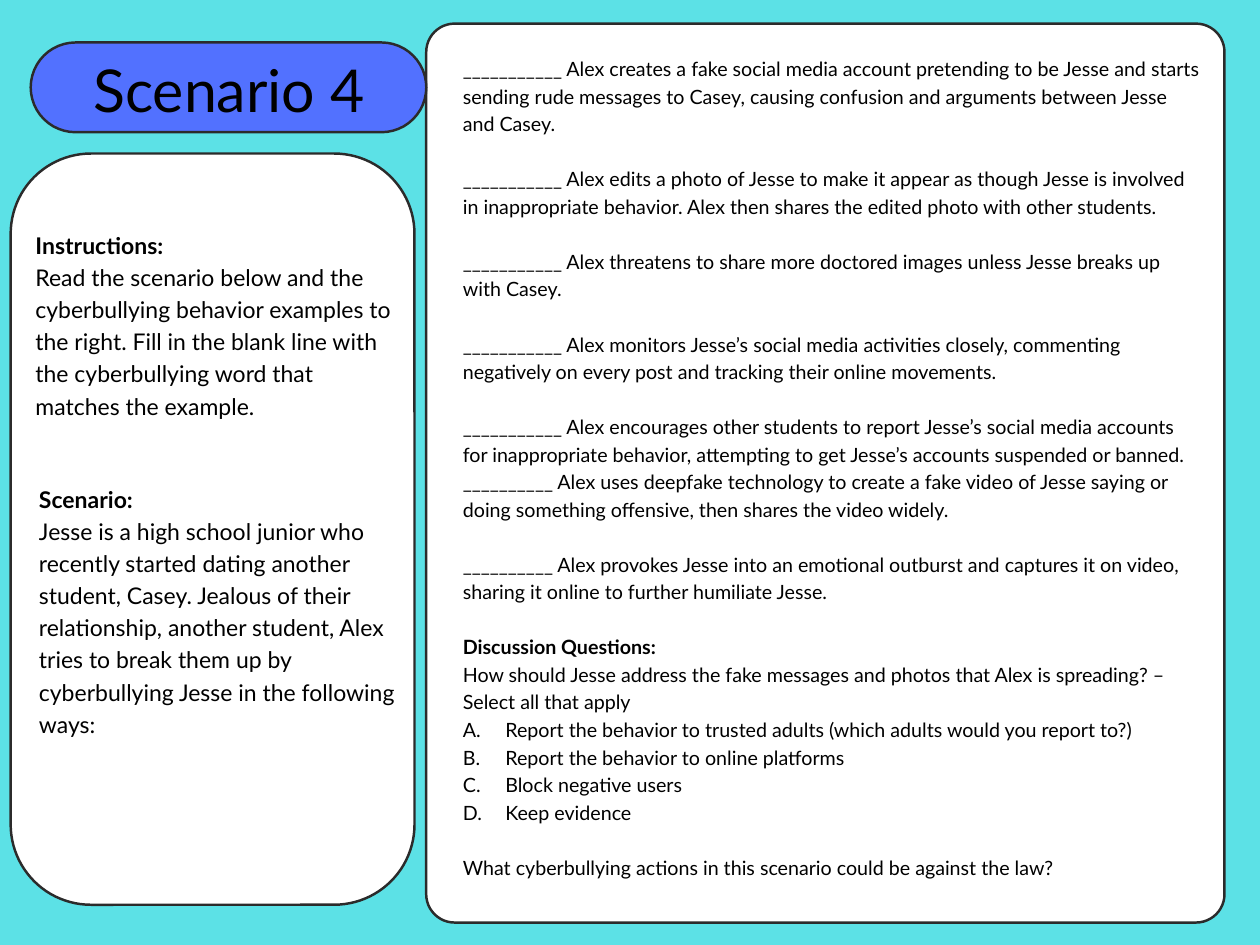
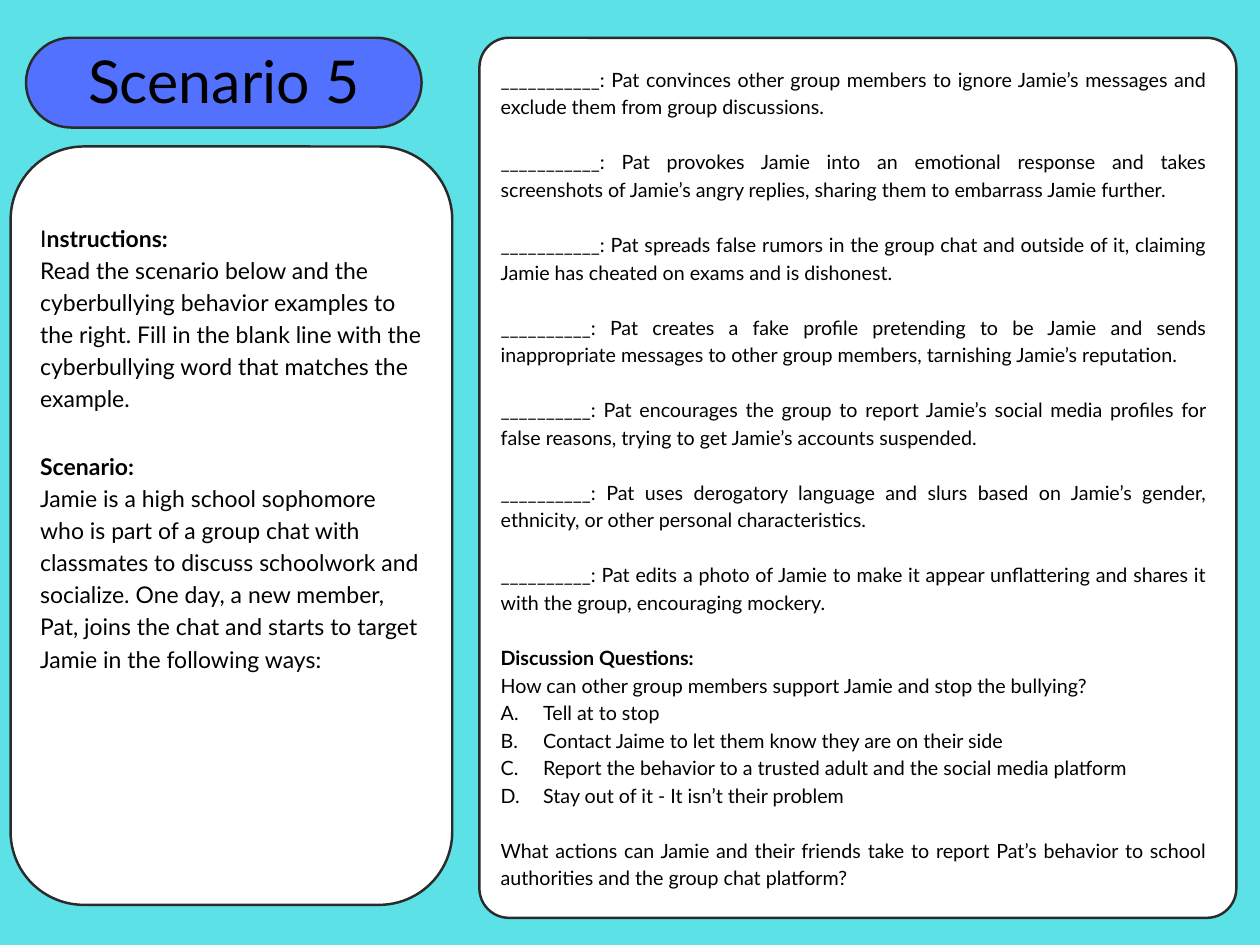
from dataclasses import dataclass

from lxml.etree import SubElement
from pptx import Presentation
from pptx.dml.color import RGBColor
from pptx.enum.shapes import MSO_SHAPE as Preset
from pptx.enum.text import MSO_AUTO_SIZE as AutoSize, PP_ALIGN as Align
from pptx.oxml.ns import qn
from pptx.util import Inches, Pt


@dataclass(frozen=True)
class Theme:
    font: str = "Lato"
    background: RGBColor = RGBColor(0x5C, 0xE1, 0xE6)
    panel: RGBColor = RGBColor(0xFF, 0xFF, 0xFF)
    pill: RGBColor = RGBColor(0x52, 0x71, 0xFF)
    outline: RGBColor = RGBColor(0x2B, 0x2B, 0x2B)
    ink: RGBColor = RGBColor(0x00, 0x00, 0x00)
    outline_width: float = 1.5
    title_size: int = 36
    side_size: int = 14
    question_size: int = 12
    leading: float = 1.4
    choice_indent: float = 0.36


THEME = Theme()


@dataclass(frozen=True)
class Box:
    left: float
    top: float
    width: float
    height: float

    def inner(self, left, top, width, height):
        return Box(self.left + left, self.top + top, width, height)

    def lengths(self):
        return [Inches(value) for value in (self.left, self.top, self.width, self.height)]


def apply_format(target, values):
    for name, value in values.items():
        setattr(target, name, value)


def add_panel(slide, box, radius, color):
    shape = slide.shapes.add_shape(Preset.ROUNDED_RECTANGLE, *box.lengths())
    shape.adjustments[0] = radius / min(box.width, box.height)
    shape.shadow.inherit = False
    shape.fill.solid()
    shape.fill.fore_color.rgb = color
    shape.line.color.rgb = THEME.outline
    shape.line.width = Pt(THEME.outline_width)


def number_choice(paragraph):
    properties = paragraph._p.get_or_add_pPr()
    indent = Inches(THEME.choice_indent)
    properties.set("marL", str(indent))
    properties.set("indent", str(-indent))
    SubElement(properties, qn("a:buFont"), typeface=THEME.font)
    SubElement(properties, qn("a:buAutoNum"), type="alphaUcPeriod")


def add_text(slide, box, size, paragraphs, align=Align.LEFT):
    frame = slide.shapes.add_textbox(*box.lengths()).text_frame
    margins = dict.fromkeys(("margin_left", "margin_top", "margin_right", "margin_bottom"), 0)
    apply_format(frame, {**margins, "word_wrap": True, "auto_size": AutoSize.SHAPE_TO_FIT_TEXT})
    leading = Pt(size * THEME.leading)
    for index, (kind, content) in enumerate(paragraphs):
        paragraph = frame.paragraphs[0] if index == 0 else frame.add_paragraph()
        gap = leading if index and kind in ("spaced", "heading") else 0
        apply_format(paragraph, {"alignment": align, "line_spacing": leading, "space_before": gap})
        if kind == "choice":
            number_choice(paragraph)
        runs = [(content, kind == "heading")] if isinstance(content, str) else content
        for text, bold in runs:
            run = paragraph.add_run()
            run.text = text
            apply_format(run.font, {"name": THEME.font, "size": Pt(size), "bold": bold})
            run.font.color.rgb = THEME.ink


def add_title(slide, box, text_box, title):
    add_panel(slide, box, box.height / 2, THEME.pill)
    add_text(slide, box.inner(*text_box), THEME.title_size, [("plain", title)], Align.CENTER)


def add_side_texts(slide, box, sections):
    for text_box, heading, body in sections:
        add_text(slide, box.inner(*text_box), THEME.side_size,
                 [("heading", heading), ("plain", body)])


def add_questions(slide, box, text_box, content, align):
    paragraphs = [*content["examples"], ("heading", "Discussion Questions:"),
                  ("plain", content["question"]),
                  *(("choice", choice) for choice in content["choices"]),
                  ("spaced", content["closing"])]
    add_text(slide, box.inner(*text_box), THEME.question_size, paragraphs, align)


def add_scenario(presentation, scenario):
    slide = presentation.slides.add_slide(presentation.slide_layouts[6])
    slide.background.fill.solid()
    slide.background.fill.fore_color.rgb = THEME.background
    side, questions = scenario["side"], scenario["questions"]
    for region in (side, questions):
        add_panel(slide, region["box"], region["radius"], THEME.panel)
    add_side_texts(slide, side["box"], side["sections"])
    add_questions(slide, questions["box"], questions["text_box"], questions, questions["align"])
    add_title(slide, **scenario["title"])


def example(blank, text, kind="spaced"):
    return kind, "_" * blank + text


INSTRUCTIONS = (
    "Read the scenario below and the cyberbullying behavior examples to the right. "
    "Fill in the blank line with the cyberbullying word that matches the example."
)

SCENARIOS = [
    {
        "title": {"box": Box(0.26, 0.36, 3.35, 0.76), "text_box": (-0.31, -0.01, 3.98, 0.67),
                  "title": "Scenario 4"},
        "side": {
            "box": Box(0.09, 1.3, 3.42, 6.36),
            "radius": 0.68,
            "sections": [
                ((0.21, 0.62, 3.09, 1.62), "Instructions:", INSTRUCTIONS),
                ((0.24, 2.77, 3.02, 2.5), "Scenario:",
                 "Jesse is a high school junior who recently started dating another student, "
                 "Casey. Jealous of their relationship, another student, Alex tries to break "
                 "them up by cyberbullying Jesse in the following ways:"),
            ],
        },
        "questions": {
            "box": Box(3.61, 0.2, 6.76, 7.61),
            "radius": 0.24,
            "text_box": (0.31, 0.25, 6.27, 7.55),
            "align": Align.LEFT,
            "examples": [
                example(11, " Alex creates a fake social media account pretending to be Jesse "
                        "and starts sending rude messages to Casey, causing confusion and "
                        "arguments between Jesse and Casey."),
                example(11, " Alex edits a photo of Jesse to make it appear as though Jesse is "
                        "involved in inappropriate behavior. Alex then shares the edited photo "
                        "with other students."),
                example(11, " Alex threatens to share more doctored images unless Jesse breaks "
                        "up with Casey."),
                example(11, " Alex monitors Jesse’s social media activities closely, commenting "
                        "negatively on every post and tracking their online movements."),
                example(11, " Alex encourages other students to report Jesse’s social media "
                        "accounts for inappropriate behavior, attempting to get Jesse’s accounts "
                        "suspended or banned."),
                example(10, " Alex uses deepfake technology to create a fake video of Jesse "
                        "saying or doing something offensive, then shares the video widely.",
                        "plain"),
                example(10, " Alex provokes Jesse into an emotional outburst and captures it on "
                        "video, sharing it online to further humiliate Jesse."),
            ],
            "question": "How should Jesse address the fake messages and photos that Alex is "
                        "spreading? – Select all that apply",
            "choices": [
                "Report the behavior to trusted adults (which adults would you report to?)",
                "Report the behavior to online platforms",
                "Block negative users",
                "Keep evidence",
            ],
            "closing": "What cyberbullying actions in this scenario could be against the law?",
        },
    },
    {
        "title": {"box": Box(0.22, 0.32, 3.35, 0.76), "text_box": (-0.77, -0.04, 4.89, 0.67),
                  "title": "Scenario 5"},
        "side": {
            "box": Box(0.09, 1.24, 3.74, 6.42),
            "radius": 0.62,
            "sections": [
                ((0.25, 0.62, 3.27, 1.62), [("I", False), ("nstructions:", True)], INSTRUCTIONS),
                ((0.25, 2.55, 3.23, 2.78), "Scenario:",
                 "Jamie is a high school sophomore who is part of a group chat with classmates "
                 "to discuss schoolwork and socialize. One day, a new member, Pat, joins the "
                 "chat and starts to target Jamie in the following ways:"),
            ],
        },
        "questions": {
            "box": Box(4.06, 0.32, 6.41, 7.45),
            "radius": 0.25,
            "text_box": (0.18, 0.22, 5.98, 7.32),
            "align": Align.JUSTIFY,
            "examples": [
                example(11, ": Pat convinces other group members to ignore Jamie’s messages and "
                        "exclude them from group discussions."),
                example(11, ": Pat provokes Jamie into an emotional response and takes "
                        "screenshots of Jamie’s angry replies, sharing them to embarrass Jamie "
                        "further."),
                example(11, ": Pat spreads false rumors in the group chat and outside of it, "
                        "claiming Jamie has cheated on exams and is dishonest."),
                example(10, ": Pat creates a fake profile pretending to be Jamie and sends "
                        "inappropriate messages to other group members, tarnishing Jamie’s "
                        "reputation."),
                example(10, ": Pat encourages the group to report Jamie’s social media profiles "
                        "for false reasons, trying to get Jamie’s accounts suspended."),
                example(10, ": Pat uses derogatory language and slurs based on Jamie’s gender, "
                        "ethnicity, or other personal characteristics."),
                example(10, ": Pat edits a photo of Jamie to make it appear unflattering and "
                        "shares it with the group, encouraging mockery."),
            ],
            "question": "How can other group members support Jamie and stop the bullying?",
            "choices": [
                "Tell at to stop",
                "Contact Jaime to let them know they are on their side",
                "Report the behavior to a trusted adult and the social media platform",
                "Stay out of it - It isn’t their problem",
            ],
            "closing": "What actions can Jamie and their friends take to report Pat’s behavior "
                       "to school authorities and the group chat platform?",
        },
    },
]


def main():
    presentation = Presentation()
    apply_format(presentation, {"slide_width": Inches(10.67), "slide_height": Inches(8)})
    for scenario in SCENARIOS:
        add_scenario(presentation, scenario)
    presentation.save("out.pptx")


if __name__ == "__main__":
    main()
